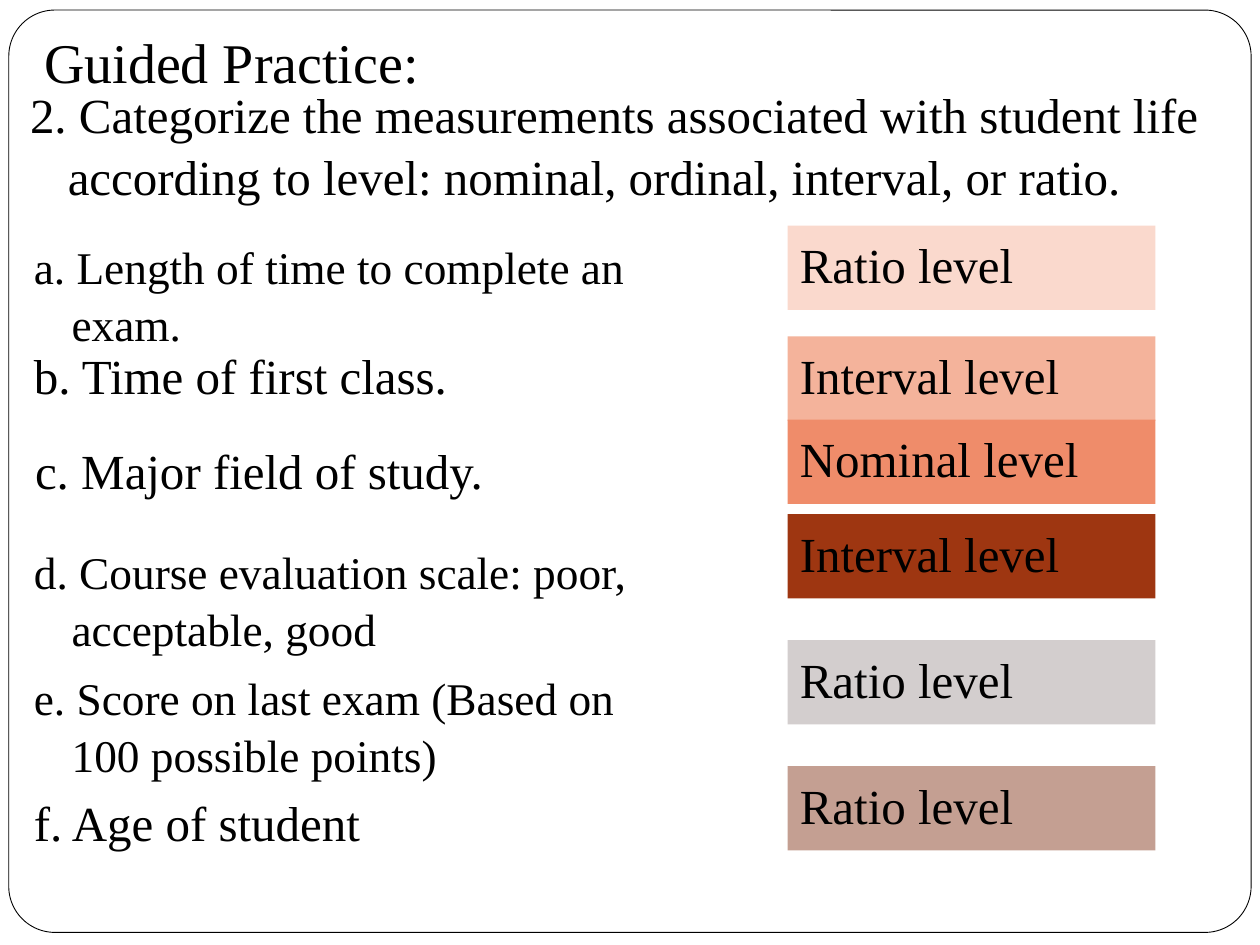
from dataclasses import dataclass

from pptx import Presentation
from pptx.dml.color import RGBColor
from pptx.enum.shapes import MSO_SHAPE
from pptx.enum.text import MSO_ANCHOR, MSO_AUTO_SIZE, PP_ALIGN
from pptx.util import Inches, Pt

RECT = MSO_SHAPE.RECTANGLE
ROUND = MSO_SHAPE.ROUNDED_RECTANGLE
TOP = MSO_ANCHOR.TOP
LEFT = PP_ALIGN.LEFT
FIXED = MSO_AUTO_SIZE.NONE
TITLE_ONLY = 5


@dataclass(frozen=True)
class Theme:
    font: str = "Times New Roman"
    ink: str = "000000"
    paper: str = "FFFFFF"
    title: float = 32
    body: float = 28
    small: float = 25.9
    hang: float = 0.3
    before: float = 5.8
    leading: float = 1.05


THEME = Theme()

# text, left, top, width, height, size
ITEMS = [
    ("a. Length of time to complete an exam.", 0.17, 1.83, 5.42, 0.67, THEME.small),
    ("b. Time of first class.", 0.17, 2.67, 5.25, 0.67, THEME.body),
    ("c. Major field of study.", 0.18, 3.42, 5.25, 0.85, THEME.body),
    ("d. Course evaluation scale: poor, acceptable, good",
     0.17, 4.25, 5.25, 0.87, THEME.small),
    ("e. Score on last exam (Based on 100 possible points)",
     0.17, 5.25, 5.25, 0.87, THEME.small),
    ("f. Age of student", 0.17, 6.22, 5.25, 0.87, THEME.body),
]

# text, top, fill
LEVELS = [
    ("Ratio level", 1.79, "FAD9CD"),
    ("Interval level", 2.67, "F4B39B"),
    ("Nominal level", 3.33, "EF8C6A"),
    ("Interval level", 4.08, "9E3611"),
    ("Ratio level", 5.08, "D3CECE"),
    ("Ratio level", 6.08, "C49F92"),
]


def color(code):
    return RGBColor.from_string(code)


def write(shape, text, size):
    """Set one paragraph with a hanging indent."""
    frame = shape.text_frame
    frame.text = text
    frame.word_wrap = True
    frame.auto_size = FIXED
    frame.vertical_anchor = TOP
    para = frame.paragraphs[0]
    para.alignment = LEFT
    para.space_before = Pt(THEME.before)
    para.line_spacing = THEME.leading
    props = para._p.get_or_add_pPr()
    props.set("marL", str(Inches(THEME.hang)))
    props.set("indent", str(-Inches(THEME.hang)))
    font = para.runs[0].font
    font.name = THEME.font
    font.size = Pt(size)
    font.color.rgb = color(THEME.ink)


def add_panel(slide, kind, box, fill):
    shape = slide.shapes.add_shape(kind, *map(Inches, box))
    shape.shadow.inherit = False
    shape.fill.solid()
    shape.fill.fore_color.rgb = color(fill)
    shape.line.fill.background()
    return shape


def add_frame(slide):
    frame = add_panel(slide, ROUND, (0.07, 0.08, 9.86, 7.32), THEME.paper)
    frame.adjustments[0] = 0.05
    frame.line.color.rgb = color(THEME.ink)
    frame.line.width = Pt(0.5)
    # The frame lies behind the title
    slide.shapes._spTree.insert(2, frame._element)


def set_title(slide, text):
    title = slide.shapes.title
    title.left, title.top = Inches(0.25), Inches(0.14)
    title.width, title.height = Inches(8.5), Inches(0.58)
    write(title, text, THEME.title)


def add_text(slide, text, box, size):
    write(slide.shapes.add_textbox(*map(Inches, box)), text, size)


def add_level(slide, text, top, fill):
    panel = add_panel(slide, RECT, (6.25, top, 2.92, 0.67), fill)
    write(panel, text, THEME.body)


def main():
    deck = Presentation()
    deck.slide_width, deck.slide_height = Inches(10), Inches(7.5)
    slide = deck.slides.add_slide(deck.slide_layouts[TITLE_ONLY])
    add_frame(slide)
    set_title(slide, "Guided Practice:")
    add_text(
        slide,
        "2. Categorize the measurements associated with student life "
        "according to level: nominal, ordinal, interval, or ratio.",
        (0.14, 0.6, 9.5, 1.24),
        THEME.body,
    )
    for text, *box, size in ITEMS:
        add_text(slide, text, box, size)
    for level in LEVELS:
        add_level(slide, *level)
    deck.save("out.pptx")


if __name__ == "__main__":
    main()
